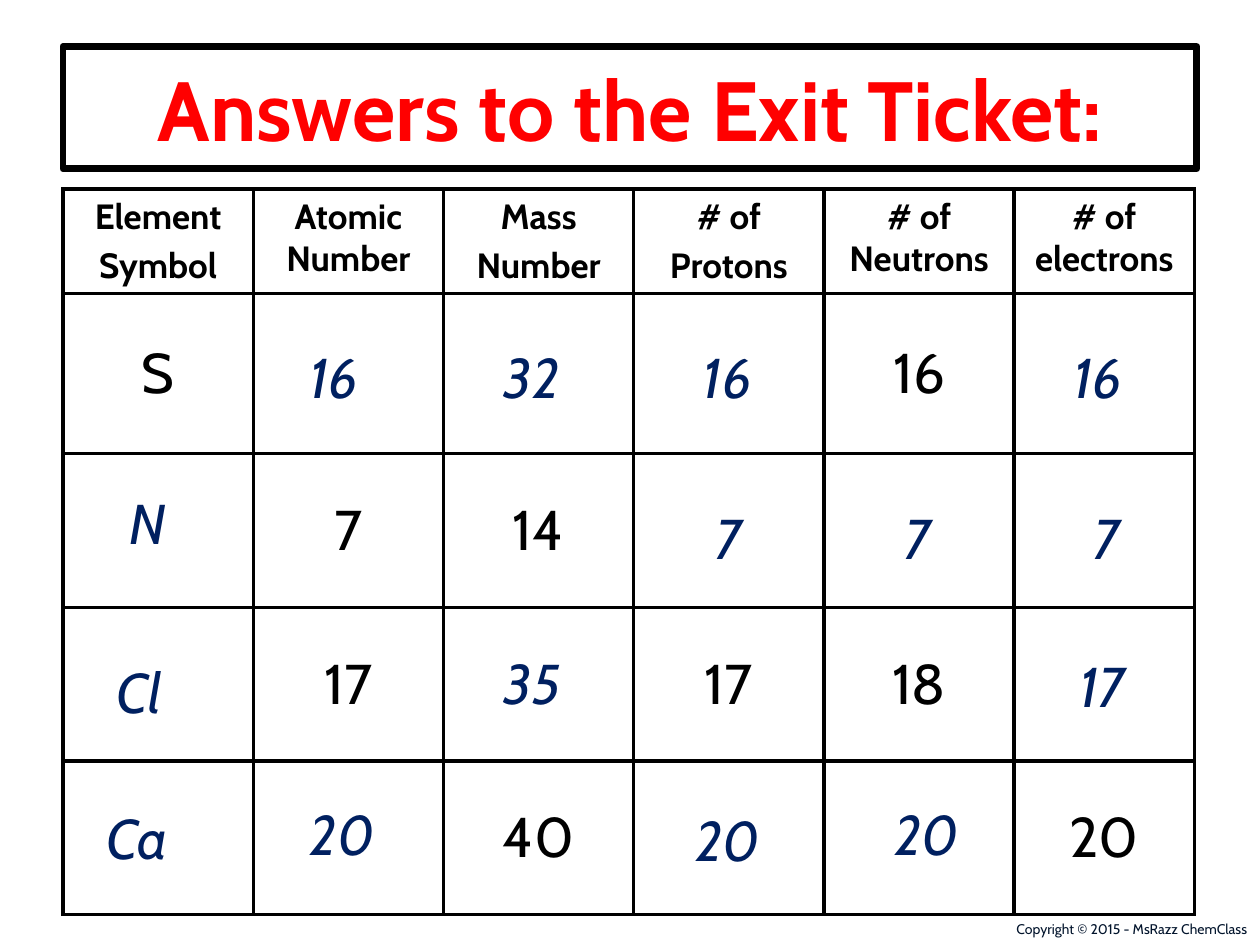
from lxml import etree
from pptx import Presentation
from pptx import util as u
from pptx.dml.color import RGBColor
from pptx.enum import text
from pptx.oxml.ns import qn

FONT = "Cabin"
BLACK, WHITE, NAVY, RED, INK = "000000", "FFFFFF", "002060", "FF0000", "02142C"
MID, CENTER, RIGHT = text.MSO_ANCHOR.MIDDLE, text.PP_ALIGN.CENTER, text.PP_ALIGN.RIGHT

TITLE = "Answers to the Exit Ticket:"
CREDIT = "Copyright © 2015 - MsRazz ChemClass"
HEADS = [["Element", "Symbol"], ["Atomic Number"], ["Mass", "Number"],
         ["# of", "Protons"], ["# of Neutrons"], ["# of electrons"]]
GIVEN = [["S", "", "", "", "16", ""],
         ["", "7", "14", "", "", ""],
         ["", "17", "", "17", "18", ""],
         ["", "", "40", "", "", "20"]]
# Answer, row, column, offset from the cell's corner
ANSWERS = [
    ("16", 1, 1, 0.35, 0.34), ("32", 1, 2, 0.38, 0.34),
    ("16", 1, 3, 0.45, 0.34), ("16", 1, 5, 0.37, 0.34),
    ("N", 2, 0, 0.43, 0.23), ("7", 2, 3, 0.55, 0.35),
    ("7", 2, 4, 0.54, 0.35), ("7", 2, 5, 0.53, 0.35),
    ("Cl", 3, 0, 0.33, 0.35), ("35", 3, 2, 0.38, 0.28), ("17", 3, 5, 0.42, 0.3),
    ("Ca", 4, 0, 0.25, 0.29), ("20", 4, 1, 0.35, 0.26),
    ("20", 4, 3, 0.39, 0.3), ("20", 4, 4, 0.46, 0.26),
]
LEFT, TOP = 0.5, 1.5
COLS = [1.51] * 5 + [1.43]
ROWS = [0.83, 1.27] + [1.22] * 3


def color(code):
    return RGBColor.from_string(code)


def write(frame, lines, size, code, align=None, bold=False, italic=False):
    for i, line in enumerate(lines):
        para = frame.add_paragraph() if i else frame.paragraphs[0]
        para.alignment = align
        if i:
            para.space_before = u.Pt(size * 0.2)
        run = para.add_run()
        run.text = line
        font = run.font
        font.name, font.size, font.bold, font.italic = FONT, u.Pt(size), bold, italic
        font.color.rgb = color(code)


def border(cell):
    props = cell._tc.get_or_add_tcPr()
    for i, side in enumerate(("lnL", "lnR", "lnT", "lnB")):
        line = etree.Element(qn("a:" + side), w=str(u.Pt(2.25)))
        fill = etree.SubElement(line, qn("a:solidFill"))
        etree.SubElement(fill, qn("a:srgbClr"), val=BLACK)
        props.insert(i, line)


def box(slide, x, y, w, h, wrap=True):
    frame = slide.shapes.add_textbox(*map(u.Inches, (x, y, w, h))).text_frame
    frame.word_wrap = wrap
    return frame


def main():
    prs = Presentation()
    prs.slide_width, prs.slide_height = u.Inches(10), u.Inches(7.5)
    slide = prs.slides.add_slide(prs.slide_layouts[5])

    # Credit line
    write(box(slide, 7.63, 7.26, 2.37, 0.24), [CREDIT], 8, INK, RIGHT)

    # Framed title
    title = slide.shapes.title
    title.left, title.top, title.width, title.height = map(u.Inches, (LEFT, 0.37, 9, 0.97))
    title.fill.solid()
    title.fill.fore_color.rgb = color(WHITE)
    title.line.color.rgb = color(BLACK)
    title.line.width = u.Pt(4)
    title.text_frame.vertical_anchor = MID
    write(title.text_frame, [TITLE], 48, RED, CENTER, bold=True)

    # Table with the given values
    table = slide.shapes.add_table(len(ROWS), len(COLS), *map(
        u.Inches, (LEFT, TOP, sum(COLS), sum(ROWS)))).table
    for col, width in zip(table.columns, COLS):
        col.width = u.Inches(width)
    for row, height in zip(table.rows, ROWS):
        row.height = u.Inches(height)
    cells = [HEADS] + [[[val] if val else [] for val in row] for row in GIVEN]
    for r, row in enumerate(cells):
        for c, lines in enumerate(row):
            cell = table.cell(r, c)
            cell.fill.solid()
            cell.fill.fore_color.rgb = color(WHITE)
            border(cell)
            if r:
                cell.vertical_anchor = MID
            write(cell.text_frame, lines, 32 if r else 20, BLACK, CENTER, bold=not r)

    # Answers over the blank cells
    for val, r, c, dx, dy in ANSWERS:
        x, y = LEFT + sum(COLS[:c]) + dx, TOP + sum(ROWS[:r]) + dy
        write(box(slide, x, y, 0.8, 0.63), [val], 32, NAVY, italic=True)

    prs.save("out.pptx")


if __name__ == "__main__":
    main()
